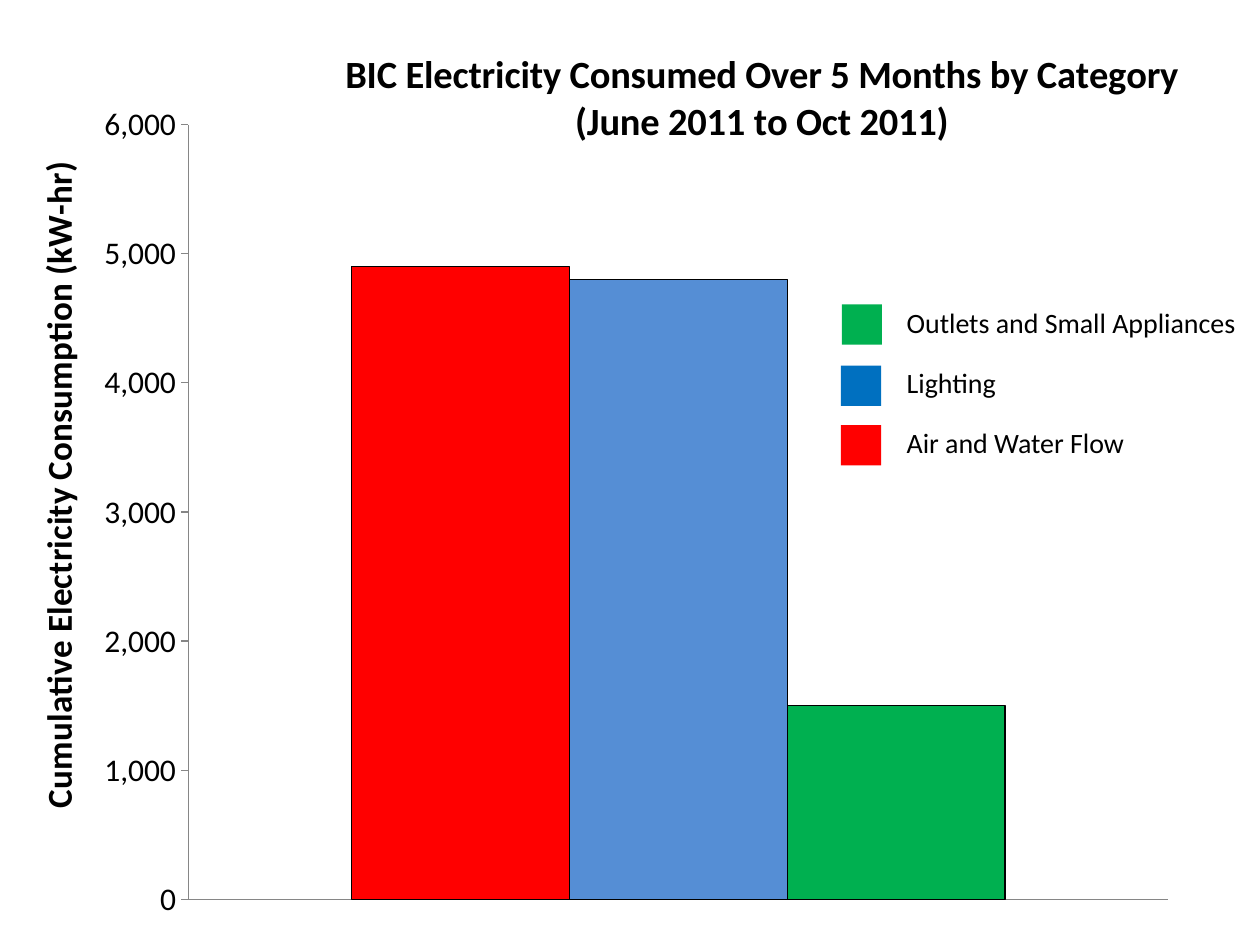
from lxml import etree
from pptx import Presentation
from pptx import util as u
from pptx.chart import data
from pptx.dml.color import RGBColor
from pptx.enum import chart as ch, shapes, text
from pptx.oxml import ns

Pt = u.Pt
BLACK = RGBColor(0, 0, 0)
GRAY = RGBColor(0x86, 0x86, 0x86)
RED = RGBColor(0xFF, 0, 0)
SKY = RGBColor(0x55, 0x8E, 0xD5)
BLUE = RGBColor(0, 0x70, 0xC0)
GREEN = RGBColor(0, 0xB0, 0x50)

WIDE, HIGH = 720, 540
BARS = [("Series 1", 4900, RED), ("Series 2", 4800, SKY),
        ("Series 3", 1500, GREEN)]
KEYS = [("Outlets and Small Appliances", GREEN, 481),
        ("Lighting", BLUE, 480.5), ("Air and Water Flow", RED, 480.5)]
TOP, LINE = 173.5, 17


def place(node, index, x, y, w=None, h=None):
    """Fix a chart part at a place, in points of the full-slide chart."""
    for old in node.findall(ns.qn("c:layout")):
        node.remove(old)
    parts = {"xMode": "edge", "yMode": "edge", "x": x / WIDE, "y": y / HIGH}
    if w:
        parts = {"layoutTarget": "inner", **parts,
                 "w": w / WIDE, "h": h / HIGH}
    lay = etree.Element(ns.qn("c:layout"))
    man = etree.SubElement(lay, ns.qn("c:manualLayout"))
    for tag, val in parts.items():
        etree.SubElement(man, ns.qn("c:" + tag)).set("val", str(val))
    node.insert(index, lay)


class Deck:
    face = "Calibri"

    def __init__(self):
        self.prs = Presentation()
        self.prs.slide_width, self.prs.slide_height = Pt(WIDE), Pt(HIGH)
        self.slide = self.prs.slides.add_slide(self.prs.slide_layouts[6])

    def style(self, font, size, bold=False):
        font.name, font.size, font.bold = self.face, Pt(size), bold
        font.color.rgb = BLACK

    def title(self, part, lines, size, x, y):
        """Write a bold title of the chart or an axis at a fixed place."""
        frame = part.text_frame
        frame.text = "\n".join(lines)
        for para in frame.paragraphs:
            self.style(para.font, size, True)
        place(part.element, 1, x, y)
        return frame

    def chart(self, bars):
        table = data.CategoryChartData(number_format="#,##0")
        table.categories = ["1"]
        for name, value, _ in bars:
            table.add_series(name, [value])
        chart = self.slide.shapes.add_chart(
            ch.XL_CHART_TYPE.COLUMN_CLUSTERED,
            0, 0, Pt(WIDE), Pt(HIGH), table).chart
        self.style(chart.font, 10)
        chart.has_legend = False
        plot = chart.plots[0]
        plot.gap_width, plot.overlap = 150, 0
        plot.vary_by_categories = False
        for series, (_, _, color) in zip(plot.series, bars):
            form = series.format
            form.fill.solid()
            form.fill.fore_color.rgb = color
            form.line.color.rgb = BLACK
            form.line.width = Pt(0.75)
        area = chart.element.find(".//" + ns.qn("c:plotArea"))
        place(area, 0, 107.7, 71.2, 560, 442.8)
        self.axes(chart)
        return chart

    def axes(self, chart):
        cat, val = chart.category_axis, chart.value_axis
        for axis in (cat, val):
            axis.has_major_gridlines = False
            axis.format.line.color.rgb = GRAY
            axis.format.line.width = Pt(0.75)
        cat.major_tick_mark = ch.XL_TICK_MARK.NONE
        cat.tick_label_position = ch.XL_TICK_LABEL_POSITION.NONE
        val.major_tick_mark = ch.XL_TICK_MARK.OUTSIDE
        val.minimum_scale, val.maximum_scale = 0, 6000
        val.major_unit = 1000
        val.tick_labels.number_format = "#,##0"
        val.tick_labels.number_format_is_linked = False
        self.style(val.tick_labels.font, 18)

    def text(self, lines, x, y, w, h):
        box = self.slide.shapes.add_textbox(Pt(x), Pt(y), Pt(w), Pt(h))
        frame = box.text_frame
        frame.word_wrap = True
        frame.auto_size = text.MSO_AUTO_SIZE.SHAPE_TO_FIT_TEXT
        frame.text = "\n".join(lines)
        for i, para in enumerate(frame.paragraphs):
            self.style(para.font, 16)
            para.line_spacing = Pt(LINE)
            para.space_before = Pt(LINE if i else 0)

    def square(self, x, y, side, color):
        box = self.slide.shapes.add_shape(
            shapes.MSO_SHAPE.RECTANGLE, Pt(x), Pt(y), Pt(side), Pt(side))
        box.shadow.inherit = False
        box.fill.solid()
        box.fill.fore_color.rgb = color
        box.line.fill.background()


def main():
    deck = Deck()
    chart = deck.chart(BARS)
    chart.has_title = True
    deck.title(chart.chart_title,
               ["BIC Electricity Consumed Over 5 Months by Category",
                "(June 2011 to Oct 2011)"], 22, 195.2, 25.8)
    chart.chart_title.include_in_layout = True
    axis = chart.value_axis
    axis.has_title = True
    frame = deck.title(axis.axis_title,
                       ["Cumulative Electricity Consumption (kW-hr)"],
                       20, 15.6, 88.8)
    turn = frame._txBody.find(ns.qn("a:bodyPr"))
    turn.set("rot", "-5400000")
    turn.set("vert", "horz")

    deck.text([name for name, _, _ in KEYS], 511, TOP, 209, 93)
    for i, (_, color, x) in enumerate(KEYS):
        deck.square(x, TOP + 0.4 + i * 2 * LINE + (i > 0), 23, color)
    deck.prs.save("out.pptx")


if __name__ == "__main__":
    main()
